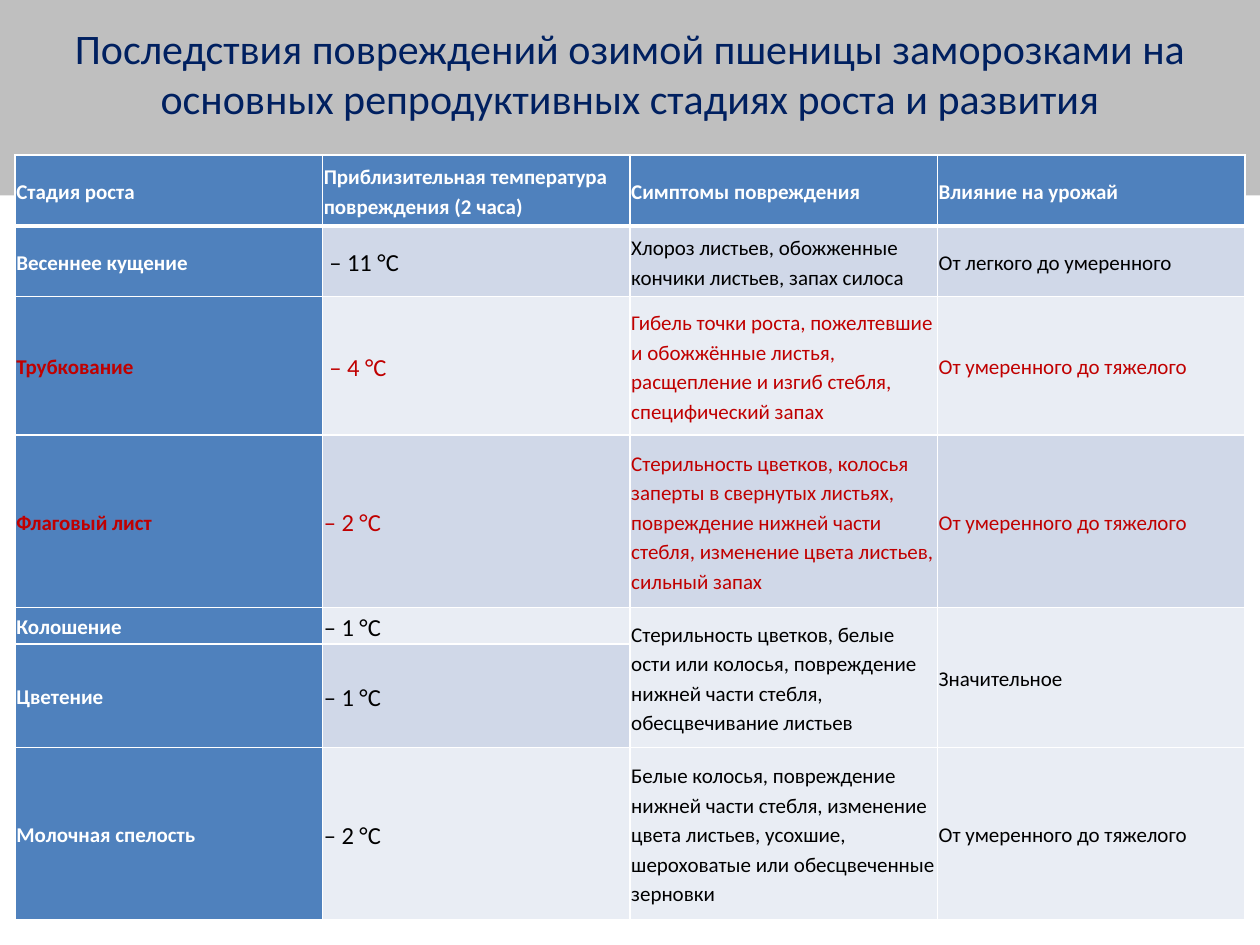
"""Build a slide with a table of frost damage to winter wheat by growth stage."""
from lxml.etree import SubElement
from pptx import Presentation
from pptx.dml.color import RGBColor as RGB
from pptx.enum.text import MSO_ANCHOR as ANCHOR, MSO_AUTO_SIZE as AUTO, PP_ALIGN as ALIGN
from pptx.oxml.ns import qn
from pptx.util import Pt

WHITE = RGB(0xFF, 0xFF, 0xFF)
BLACK = RGB(0, 0, 0)
RED = RGB(0xC0, 0, 0)
NAVY = RGB(0, 0x20, 0x60)
GREY = RGB(0xBF, 0xBF, 0xBF)
BLUE = RGB(0x4F, 0x81, 0xBD)
BANDS = (RGB(0xE9, 0xED, 0xF4), RGB(0xD0, 0xD8, 0xE8))

TITLE = ("Последствия повреждений озимой пшеницы заморозками на "
         "основных репродуктивных стадиях роста и развития")
ROWS = [
    ("Стадия роста", "Приблизительная температура повреждения (2 часа)",
     "Симптомы повреждения", "Влияние на урожай"),
    ("Весеннее кущение", " – 11 °С",
     "Хлороз листьев, обожженные кончики листьев, запах силоса",
     "От легкого до умеренного"),
    ("Трубкование", " – 4 °С",
     "Гибель точки роста, пожелтевшие и обожжённые листья, "
     "расщепление и изгиб стебля, специфический запах",
     "От умеренного до тяжелого"),
    ("Флаговый лист", "– 2 °С",
     "Стерильность цветков, колосья заперты в свернутых листьях, "
     "повреждение нижней части стебля, изменение цвета листьев, сильный запах",
     "От умеренного до тяжелого"),
    ("Колошение", "– 1 °С",
     "Стерильность цветков, белые ости или колосья, "
     "повреждение нижней части стебля, обесцвечивание листьев",
     "Значительное"),
    ("Цветение", "– 1 °С", None, None),
    ("Молочная спелость", "– 2 °С",
     "Белые колосья, повреждение нижней части стебля, изменение цвета листьев, "
     "усохшие, шероховатые или обесцвеченные зерновки",
     "От умеренного до тяжелого"),
]
ROW_HEIGHTS = (40.5, 40.5, 79, 98.5, 20.5, 59, 98.5)
COL_WIDTH = 175.7
RED_ROWS = (2, 3)
FLOWERING_ROW = 5
LAST_ROW = len(ROWS) - 1


def set_attrs(obj, values):
    """Set each attribute of an object from a dict."""
    for name, value in values.items():
        setattr(obj, name, value)


def write_text(tf, text, size, color, bold=False, **para):
    """Put one formatted run into a text frame."""
    p = tf.paragraphs[0]
    set_attrs(p, para)
    r = p.add_run()
    r.text = text
    set_attrs(r.font, {"name": "Calibri", "size": Pt(size), "bold": bold})
    r.font.color.rgb = color


def add_title(s):
    """Format the title placeholder as a grey band."""
    sp = s.shapes.title
    set_attrs(sp, {"left": Pt(0), "top": Pt(0), "width": Pt(720), "height": Pt(111.6)})
    sp.fill.solid()
    sp.fill.fore_color.rgb = GREY
    tf = sp.text_frame
    set_attrs(tf, {"word_wrap": True, "auto_size": AUTO.NONE,
                   "vertical_anchor": ANCHOR.MIDDLE, "margin_bottom": Pt(32)})
    write_text(tf, TITLE, 24, NAVY, alignment=ALIGN.CENTER)


def set_borders(cell, widths):
    """Draw white borders of the given widths around a cell."""
    tc_pr = cell._tc.get_or_add_tcPr()
    for side, width in widths.items():
        ln = SubElement(tc_pr, qn(f"a:ln{side}"), w=str(Pt(width)))
        fill = SubElement(ln, qn("a:solidFill"))
        SubElement(fill, qn("a:srgbClr"), val=str(WHITE))


def format_cell(cell, row, col):
    """Set the margins, borders and fill of a cell."""
    margins = dict.fromkeys(("margin_left", "margin_top", "margin_right", "margin_bottom"), Pt(0.75))
    set_attrs(cell, {"vertical_anchor": ANCHOR.MIDDLE, **margins})
    set_borders(cell, {"L": 1, "R": 1, "T": 3 if row == 1 else 1, "B": 3 if row == 0 else 1})
    cell.fill.solid()
    cell.fill.fore_color.rgb = BLUE if row == 0 or col == 0 else BANDS[row % 2]


def write_cell(cell, row, col, text):
    """Write the text of a cell in the style of its row and column."""
    heading = row == 0 or col == 0
    color = RED if row in RED_ROWS else WHITE if heading else BLACK
    size = 14 if col == 1 and not heading else 12
    write_text(cell.text_frame, text, size, color, heading, line_spacing=1.15)


def add_damage_table(s):
    """Add the table of growth stages, temperatures, symptoms and effects."""
    cols = len(ROWS[0])
    table = s.shapes.add_table(len(ROWS), cols, Pt(8.6), Pt(88.6),
                               Pt(COL_WIDTH * cols), Pt(sum(ROW_HEIGHTS))).table
    table.first_col = True
    for column in table.columns:
        column.width = Pt(COL_WIDTH)
    for i, (height, texts) in enumerate(zip(ROW_HEIGHTS, ROWS)):
        table.rows[i].height = Pt(height)
        for j, text in enumerate(texts):
            cell = table.cell(i, j)
            format_cell(cell, i, j)
            if text is None:
                table.cell(i - 1, j).merge(cell)
            else:
                write_cell(cell, i, j, text)


def main():
    """Build and save the slide."""
    prs = Presentation()
    set_attrs(prs, {"slide_width": Pt(720), "slide_height": Pt(540)})
    s = prs.slides.add_slide(prs.slide_layouts[5])
    add_title(s)
    add_damage_table(s)
    prs.save("out.pptx")


if __name__ == "__main__":
    main()
